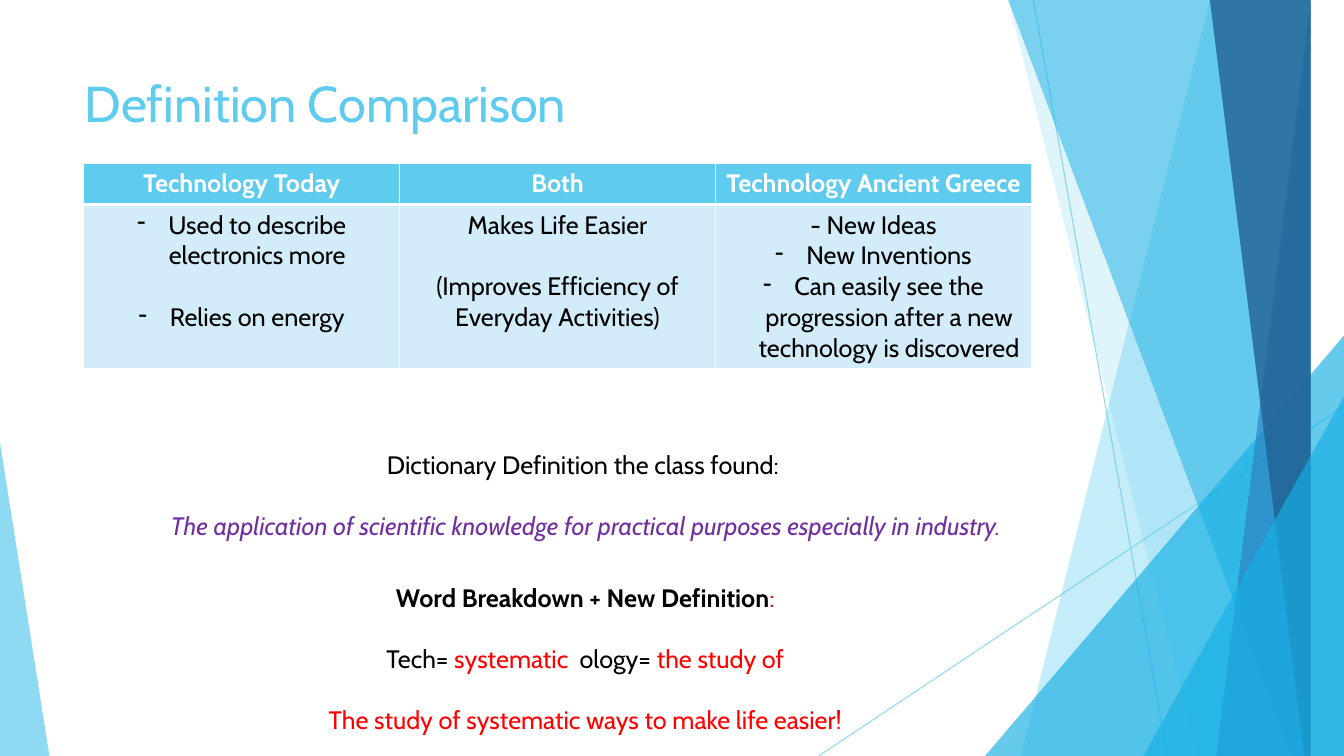
import pptx
import pptx.dml.color
import pptx.enum.shapes
import pptx.enum.text
import pptx.oxml
import pptx.oxml.ns
import pptx.util

Inches = pptx.util.Inches
Pt = pptx.util.Pt
RGBColor = pptx.dml.color.RGBColor
Shapes = pptx.enum.shapes.MSO_SHAPE
Align = pptx.enum.text.PP_ALIGN

SKY = RGBColor(0x5F, 0xCB, 0xEF)
CYAN = RGBColor(0x17, 0xB0, 0xE4)
BLUE = RGBColor(0x2E, 0x83, 0xC3)
NAVY = RGBColor(0x22, 0x62, 0x92)
PALE = RGBColor(0xD2, 0xEC, 0xF9)
WHITE = RGBColor(0xFF, 0xFF, 0xFF)
BLACK = RGBColor(0, 0, 0)
RED = RGBColor(0xFF, 0, 0)
PURPLE = RGBColor(0x70, 0x30, 0xA0)

WIDTH, HEIGHT = 13.33, 7.5
FONT = "Cabin"
GAP = 22  # points, one line of 18 pt text
TITLE = "Definition Comparison"

# Table content: (text, bulleted, space after in points)
HEADINGS = ["Technology Today", "Both", "Technology Ancient Greece"]
COLUMNS = [
    [("Used to describe electronics more", True, GAP),
     ("Relies on energy", True, 0)],
    [("Makes Life Easier", False, GAP),
     ("(Improves Efficiency of Everyday Activities)", False, 0)],
    [("- New Ideas", False, 0),
     ("New Inventions", True, 0),
     ("Can easily see the progression after a new technology is discovered",
      True, 0)],
]

# Text boxes: place, then paragraphs of (text, format) spans
NOTES = [
    ((0.94, 4.41, 9.74, 1.31), [
        [("Dictionary Definition the class found: ", {})],
        [("The application of scientific knowledge for practical purposes "
          "especially in industry.", {"color": PURPLE, "italic": True})],
    ]),
    ((2.91, 5.73, 5.79, 1.62), [
        [("Word Breakdown + New Definition", {"bold": True}),
         (":", {"color": RED})],
        [("Tech=", {}), (" systematic  ", {"color": RED}),
         ("ology=", {}), (" the study of", {"color": RED})],
        [("The study of systematic ways to make life easier!",
          {"color": RED})],
    ]),
]

# Background: rays as (from x, from y, to x, to y)
RAYS = [(10.25, 0, 11.58, HEIGHT), (WIDTH, 4.03, 8.12, HEIGHT)]
# Bands reach the right edge: (top x, bottom x, colour, opacity)
# Wedges stand on the bottom edge: (left, top, width, apex, colour, opacity)
FACETS = [
    (12.28, 10.04, SKY, 36),
    (10.5, 11.83, SKY, 20),
    (9.77, 3.33, 3.56, 1, CYAN, 66),
    (10.21, 12.91, CYAN, 50),
    (13.03, 11.92, BLUE, 70),
    (11.96, 13.18, NAVY, 80),
    (11.34, 3.93, 1.99, 1, CYAN, 66),
    (0, 4.39, 0.49, 0, SKY, 70),
]


def set_opacity(color_format_parent, percent):
    for color in color_format_parent.iter(pptx.oxml.ns.qn("a:srgbClr")):
        alpha = color.makeelement(pptx.oxml.ns.qn("a:alpha"),
                                  {"val": str(percent * 1000)})
        color.append(alpha)


def add_span(para, text, **changes):
    span = para.add_run()
    span.text = text
    values = {"name": FONT, "size": Pt(18), "bold": False, "italic": False}
    color = changes.pop("color", BLACK)
    for name, value in {**values, **changes}.items():
        setattr(span.font, name, value)
    span.font.color.rgb = color


def add_para(frame, index, spans, space=0):
    para = frame.paragraphs[0] if index == 0 else frame.add_paragraph()
    para.alignment = Align.CENTER
    para.space_after = Pt(space)
    for text, changes in spans:
        add_span(para, text, **changes)
    return para


def add_bullet(para):
    properties = para._p.get_or_add_pPr()
    indent = Inches(0.31)
    properties.set("marL", str(indent))
    properties.set("indent", str(-indent))
    bullet = properties.makeelement(pptx.oxml.ns.qn("a:buChar"), {"char": "-"})
    properties.append(bullet)


def style_cell(cell, fill, top, bottom):
    properties = cell._tc.get_or_add_tcPr()
    for side, points in {"L": 1, "R": 1, "T": top, "B": bottom}.items():
        properties.append(pptx.oxml.parse_xml(
            f'<a:ln{side} {pptx.oxml.ns.nsdecls("a")} w="{Pt(points)}">'
            f'<a:solidFill><a:srgbClr val="{WHITE}"/></a:solidFill>'
            f'</a:ln{side}>'))
    cell.fill.solid()
    cell.fill.fore_color.rgb = fill


def draw_background(page):
    for ray in RAYS:
        line = page.shapes.add_connector(
            pptx.enum.shapes.MSO_CONNECTOR.STRAIGHT, *map(Inches, ray))
        line.line.color.rgb = SKY
        line.line.width = Pt(0.75)
        properties = line._element.spPr
        set_opacity(properties, 70)
        properties.append(
            properties.makeelement(pptx.oxml.ns.qn("a:effectLst"), {}))

    for *place, color, opacity in FACETS:
        if len(place) == 2:
            top_x, bottom_x = place
            builder = page.shapes.build_freeform(top_x, 0, scale=Inches(1))
            builder.add_line_segments(
                [(WIDTH, 0), (WIDTH, HEIGHT), (bottom_x, HEIGHT)], close=True)
            facet = builder.convert_to_shape()
        else:
            left, top, width, apex = place
            facet = page.shapes.add_shape(
                Shapes.ISOSCELES_TRIANGLE,
                *map(Inches, (left, top, width, HEIGHT - top)))
            facet.adjustments[0] = apex
        facet.shadow.inherit = False
        facet.line.fill.background()
        facet.fill.solid()
        facet.fill.fore_color.rgb = color
        set_opacity(facet._element.spPr, opacity)


def draw_title(page):
    title = page.shapes.title
    place = {"left": 0.74, "top": 0.67, "width": 9.4, "height": 1.44}
    for name, value in place.items():
        setattr(title, name, Inches(value))
    title.text_frame.vertical_anchor = pptx.enum.text.MSO_ANCHOR.TOP
    para = title.text_frame.paragraphs[0]
    para.alignment = Align.LEFT
    add_span(para, TITLE, size=Pt(36), color=SKY)


def draw_table(page):
    heights = [0.41, 1.62]
    table = page.shapes.add_table(
        2, len(COLUMNS),
        *map(Inches, (0.83, 1.62, 9.4, sum(heights)))).table
    for row, height in zip(table.rows, heights):
        row.height = Inches(height)
    for number, (heading, items) in enumerate(zip(HEADINGS, COLUMNS)):
        head, body = table.cell(0, number), table.cell(1, number)
        style_cell(head, SKY, 1, 3)
        style_cell(body, PALE, 3, 1)
        add_para(head.text_frame, 0,
                 [(heading, {"bold": True, "color": WHITE})])
        for index, (text, bulleted, space) in enumerate(items):
            para = add_para(body.text_frame, index, [(text, {})], space)
            if bulleted:
                add_bullet(para)


def draw_notes(page):
    for place, paragraphs in NOTES:
        frame = page.shapes.add_textbox(*map(Inches, place)).text_frame
        frame.word_wrap = False
        for index, spans in enumerate(paragraphs):
            last = index == len(paragraphs) - 1
            add_para(frame, index, spans, 0 if last else GAP)


def main():
    deck = pptx.Presentation()
    deck.slide_width, deck.slide_height = Inches(WIDTH), Inches(HEIGHT)
    page = deck.slides.add_slide(deck.slide_layouts[5])
    draw_background(page)
    draw_title(page)
    draw_table(page)
    draw_notes(page)
    deck.save("out.pptx")


if __name__ == "__main__":
    main()
